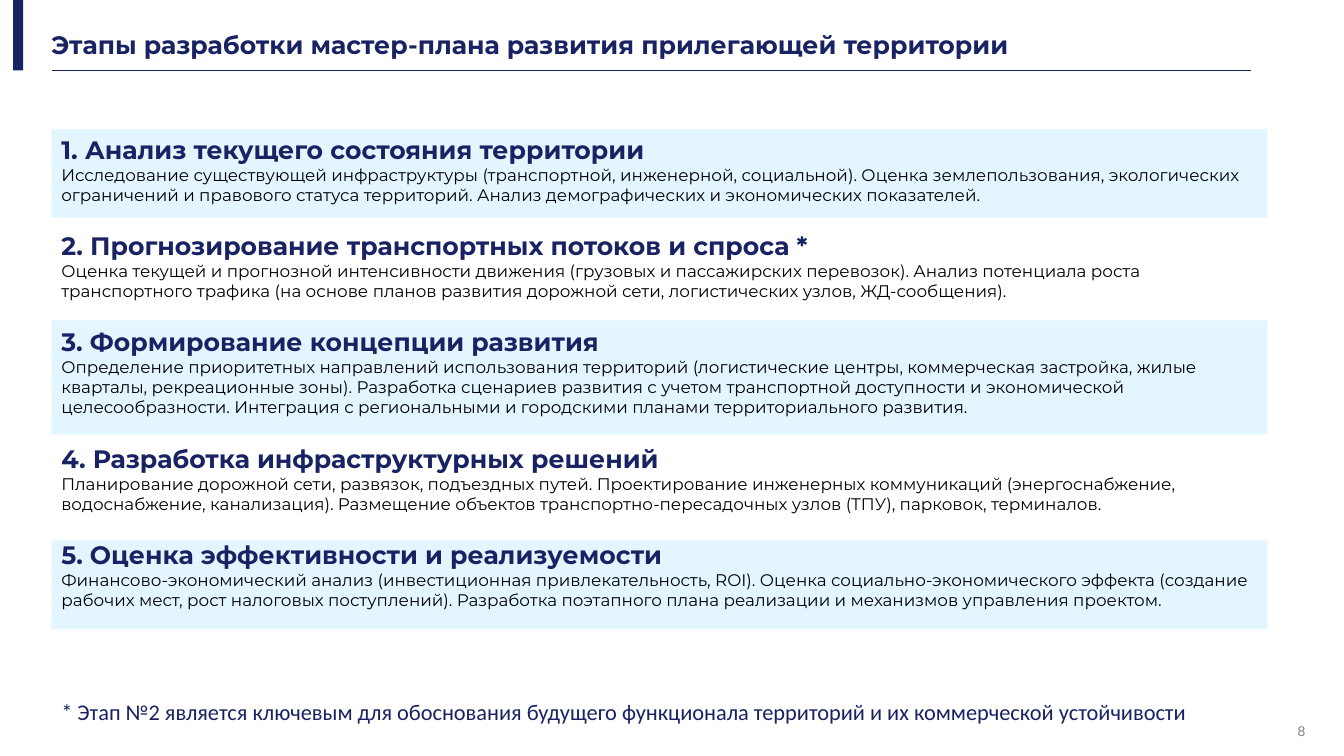
from lxml import etree
from pptx import Presentation
from pptx.dml.color import RGBColor
from pptx.enum import shapes, text
from pptx.oxml.ns import qn
from pptx.util import Inches, Pt

TITLE = "Этапы разработки мастер-плана развития прилегающей территории"
STAGES = [
    ("1. Анализ текущего состояния территории",
     "Исследование существующей инфраструктуры (транспортной, инженерной, социальной). "
     "Оценка землепользования, экологических ограничений и правового статуса территорий. "
     "Анализ демографических и экономических показателей."),
    ("2. Прогнозирование транспортных потоков и спроса *",
     "Оценка текущей и прогнозной интенсивности движения (грузовых и пассажирских перевозок). "
     "Анализ потенциала роста транспортного трафика (на основе планов развития дорожной сети, "
     "логистических узлов, ЖД-сообщения)."),
    ("3. Формирование концепции развития",
     "Определение приоритетных направлений использования территорий (логистические центры, "
     "коммерческая застройка, жилые кварталы, рекреационные зоны). Разработка сценариев развития "
     "с учетом транспортной доступности и экономической целесообразности. "
     "Интеграция с региональными и городскими планами территориального развития."),
    ("4. Разработка инфраструктурных решений",
     "Планирование дорожной сети, развязок, подъездных путей. Проектирование инженерных "
     "коммуникаций (энергоснабжение, водоснабжение, канализация). Размещение объектов "
     "транспортно-пересадочных узлов (ТПУ), парковок, терминалов."),
    ("5. Оценка эффективности и реализуемости",
     "Финансово-экономический анализ (инвестиционная привлекательность, ROI). Оценка "
     "социально-экономического эффекта (создание рабочих мест, рост налоговых поступлений). "
     "Разработка поэтапного плана реализации и механизмов управления проектом."),
]
FOOTNOTE = ("* Этап №2 является ключевым для обоснования будущего функционала территорий "
            "и их коммерческой устойчивости")
PAGE_NUMBER = "8"
BANDS = [(1.28, 0.88), (3.18, 1.13), (5.36, 0.88)]  # top, height
LEFT, WIDTH = 0.51, 12.06
STAGE_GAP = 18.4
COLORS = {"navy": "192364", "band": "E3F5FF", "black": "000000", "grey": "828282"}


def color(name):
    return RGBColor.from_string(COLORS[name])


def add_bar(page, left, top, width, height, fill):
    bar = page.shapes.add_shape(shapes.MSO_SHAPE.RECTANGLE, Inches(left), Inches(top),
                                Inches(width), Inches(height))
    bar.shadow.inherit = False
    bar.fill.solid()
    bar.fill.fore_color.rgb = color(fill)
    bar.line.fill.background()


def add_rule(page, left, right, y):
    rule = page.shapes.add_connector(shapes.MSO_CONNECTOR.STRAIGHT, Inches(left), Inches(y),
                                     Inches(right), Inches(y))
    rule.line.color.rgb = color("navy")
    rule.line.width = Pt(0.5)
    etree.SubElement(rule._element.spPr, qn("a:effectLst"))


def place(box, left, top, width, height, inset=True):
    box.left, box.top = Inches(left), Inches(top)
    box.width, box.height = Inches(width), Inches(height)
    frame = box.text_frame
    frame.word_wrap = True
    frame.auto_size = text.MSO_AUTO_SIZE.NONE
    frame.vertical_anchor = text.MSO_ANCHOR.TOP
    if not inset:
        frame.margin_left = frame.margin_top = frame.margin_right = frame.margin_bottom = 0
    return frame


def add_box(page, *bounds, inset=True):
    return place(page.shapes.add_textbox(0, 0, 0, 0), *bounds, inset=inset)


def write(para, words, size, fill="navy", font="Montserrat", bold=False, before=0, spacing=1.0):
    para.alignment = text.PP_ALIGN.LEFT
    para.space_before = Pt(before)
    para.line_spacing = spacing
    span = para.add_run()
    span.text = words
    span.font.name, span.font.size, span.font.bold = font, Pt(size), bold
    span.font.color.rgb = color(fill)


def main():
    deck = Presentation()
    deck.slide_width, deck.slide_height = Inches(13.33), Inches(7.5)
    page = deck.slides.add_slide(deck.slide_layouts[5])

    add_rule(page, 0.52, 12.41, 0.7)
    add_bar(page, 0.13, 0, 0.1, 0.7, "navy")
    for top, height in BANDS:
        add_bar(page, LEFT, top, WIDTH, height, "band")

    title = place(page.shapes.title, LEFT, 0.32, 12.74, 0.27, inset=False)
    write(title.paragraphs[0], TITLE, 18, bold=True, spacing=0.9)

    stages = add_box(page, LEFT, 1.28, WIDTH, 4.91)
    for index, (heading, details) in enumerate(STAGES):
        para = stages.add_paragraph() if index else stages.paragraphs[0]
        write(para, heading, 18, bold=True, before=STAGE_GAP if index else 0)
        write(stages.add_paragraph(), details, 12, fill="black")

    footnote = add_box(page, LEFT, 6.88, 11.81, 0.37)
    write(footnote.paragraphs[0], FOOTNOTE, 16, font="Calibri")
    number = add_box(page, 12.87, 7.17, 0.32, 0.25, inset=False)
    write(number.paragraphs[0], PAGE_NUMBER, 10, fill="grey", font="Arial")

    deck.save("out.pptx")


if __name__ == "__main__":
    main()
